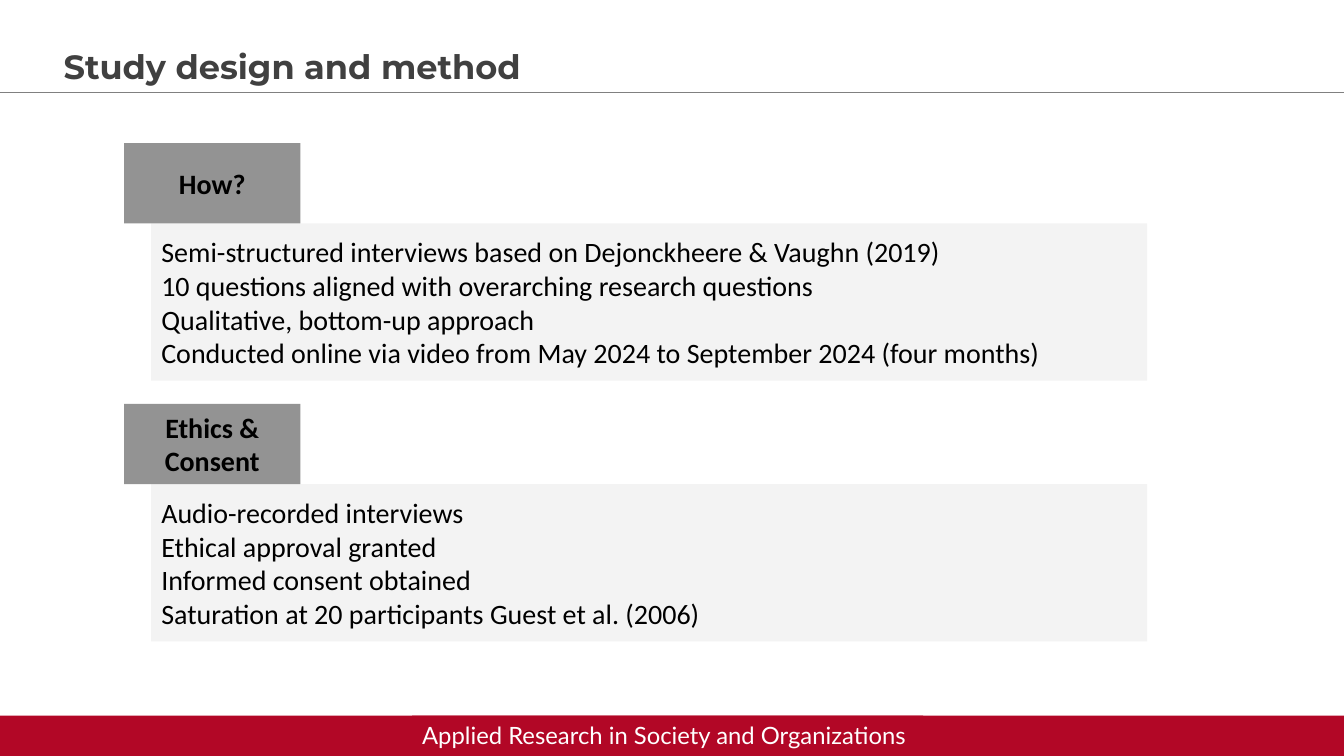
"""Build the study design and method slide."""
from dataclasses import dataclass

from lxml.etree import SubElement
from pptx import Presentation
from pptx.dml.color import RGBColor
from pptx.enum.shapes import MSO_CONNECTOR, MSO_SHAPE
from pptx.enum.text import MSO_ANCHOR, MSO_AUTO_SIZE, PP_ALIGN
from pptx.oxml.ns import qn
from pptx.shapes.autoshape import Shape
from pptx.slide import Slide
from pptx.util import Pt

COLORS = {
    "red": "B20726",
    "header": "939393",
    "panel": "F3F3F3",
    "rule": "808080",
    "title": "404040",
    "black": "000000",
    "white": "FFFFFF",
}
WIDTH, HEIGHT = 960, 540
SECTION_TOP, SECTION_STEP = 102.2, 186.2
HEADER_HEIGHT = 57.4


@dataclass(frozen=True)
class Section:
    header: str
    items: tuple[str, ...]


SECTIONS = (
    Section("How?", (
        "Semi-structured interviews based on Dejonckheere & Vaughn (2019)",
        "10 questions aligned with overarching research questions",
        "Qualitative, bottom-up approach",
        "Conducted online via video from May 2024 to September 2024 (four months)",
    )),
    Section("Ethics & Consent", (
        "Audio-recorded interviews",
        "Ethical approval granted",
        "Informed consent obtained",
        "Saturation at 20 participants Guest et al. (2006)",
    )),
)


def color(name: str) -> RGBColor:
    """Return a palette colour."""
    return RGBColor.from_string(COLORS[name])


def place(sp: Shape, left: float, top: float, width: float, height: float) -> None:
    """Move and size a shape, in points."""
    sp.left, sp.top, sp.width, sp.height = map(Pt, (left, top, width, height))


def write(sp: Shape, *lines: str, size: float = 20, font: str = "Calibri",
          fill: str = "black", bold: bool = False,
          align: PP_ALIGN = PP_ALIGN.LEFT,
          anchor: MSO_ANCHOR = MSO_ANCHOR.MIDDLE) -> None:
    """Write one unbulleted paragraph per line in the given format."""
    tf = sp.text_frame
    tf.word_wrap = True
    tf.auto_size = MSO_AUTO_SIZE.NONE
    tf.vertical_anchor = anchor
    for i, line in enumerate(lines):
        p = tf.paragraphs[0] if i == 0 else tf.add_paragraph()
        p.alignment = align
        p.space_before = Pt(0)
        pPr = p._p.get_or_add_pPr()
        pPr.set("marL", "0")
        pPr.set("indent", "0")
        SubElement(pPr, qn("a:buNone"))
        r = p.add_run()
        r.text = line
        r.font.size = Pt(size)
        r.font.name = font
        r.font.bold = bold
        r.font.color.rgb = color(fill)


def add_box(s: Slide, left: float, top: float, width: float, height: float,
            fill: str) -> Shape:
    """Add a plain filled rectangle."""
    sp = s.shapes.add_shape(MSO_SHAPE.RECTANGLE, Pt(left), Pt(top),
                            Pt(width), Pt(height))
    sp.shadow.inherit = False
    sp.fill.solid()
    sp.fill.fore_color.rgb = color(fill)
    sp.line.fill.background()
    return sp


def add_rule(s: Slide, top: float) -> None:
    """Add a thin line across the slide."""
    line = s.shapes.add_connector(MSO_CONNECTOR.STRAIGHT, Pt(0), Pt(top),
                                  Pt(WIDTH), Pt(top))
    line.line.width = Pt(0.25)
    line.line.color.rgb = color("rule")
    SubElement(line._element.spPr, qn("a:effectLst"))


def add_section(s: Slide, section: Section, body: Shape, top: float) -> None:
    """Draw a header box and fill its list placeholder below."""
    header = add_box(s, 88.6, top, 126, HEADER_HEIGHT, "header")
    write(header, section.header, bold=True, align=PP_ALIGN.CENTER)
    place(body, 108, top + HEADER_HEIGHT, 711.4, 112.3)
    body.fill.solid()
    body.fill.fore_color.rgb = color("panel")
    write(body, *section.items)


def main() -> None:
    """Build and save the slide."""
    prs = Presentation()
    prs.slide_width, prs.slide_height = Pt(WIDTH), Pt(HEIGHT)
    s = prs.slides.add_slide(prs.slide_layouts[3])
    title, *bodies = s.placeholders

    place(title, 38.2, 29.5, 722, 36)
    write(title, "Study design and method", size=24, font="Montserrat",
          fill="title", bold=True, anchor=MSO_ANCHOR.TOP)
    add_rule(s, 65.8)

    add_box(s, 0, 511.2, WIDTH, 28.8, "red")
    footer = add_box(s, 294.5, 511.2, 365, 28, "red")
    write(footer, "Applied Research in Society and Organizations", size=17,
          font="Lato", fill="white", anchor=MSO_ANCHOR.TOP)

    for i, (section, body) in enumerate(zip(SECTIONS, bodies)):
        add_section(s, section, body, SECTION_TOP + i * SECTION_STEP)

    prs.save("out.pptx")


if __name__ == "__main__":
    main()
